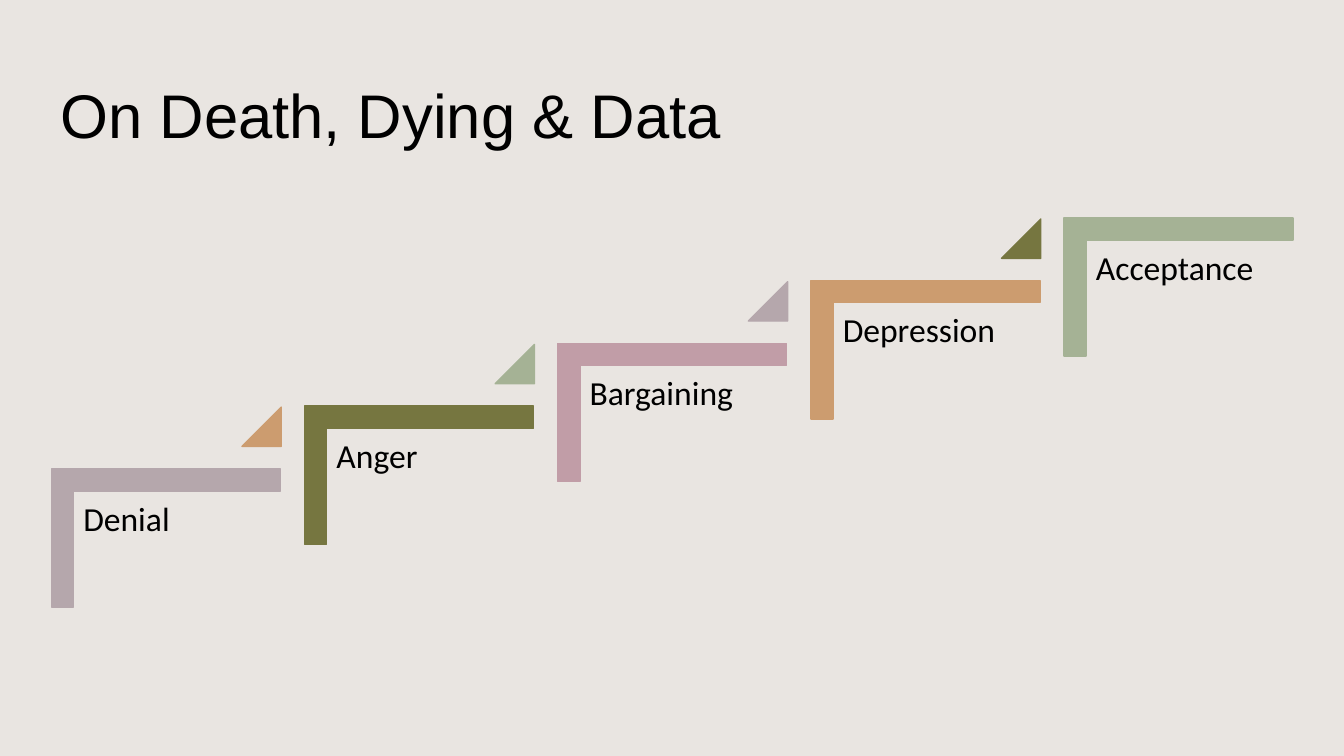
from pptx import Presentation
from pptx.dml.color import RGBColor
from pptx.enum.shapes import MSO_SHAPE as Kind
from pptx.enum.text import MSO_ANCHOR as Anchor, PP_ALIGN as Align
from pptx.util import Cm, Pt

MAUVE, OLIVE, ROSE, TAN, SAGE = "B5A7AC", "767640", "C19DA7", "CC9C6F", "A5B295"
STAGES = [
    ("Denial", MAUVE, TAN),
    ("Anger", OLIVE, SAGE),
    ("Bargaining", ROSE, MAUVE),
    ("Depression", TAN, OLIVE),
    ("Acceptance", SAGE, None),
]
RUN, RISE = 6.38, 1.58


def paint(fill, color):
    fill.solid()
    fill.fore_color.rgb = RGBColor.from_string(color)


class Stairs:
    ink = "000000"
    back = "E9E5E1"

    def __init__(self, deck):
        self.slide = deck.slides.add_slide(deck.slide_layouts[5])
        paint(self.slide.background.fill, self.back)

    def style(self, para, face, size):
        para.alignment = Align.LEFT
        para.font.name = face
        para.font.size = Pt(size)
        para.font.color.rgb = RGBColor.from_string(self.ink)

    def title(self, text, x, y, w, h):
        box = self.slide.shapes.title
        box.left, box.top, box.width, box.height = Cm(x), Cm(y), Cm(w), Cm(h)
        frame = box.text_frame
        frame.text = text
        frame.vertical_anchor = Anchor.MIDDLE
        self.style(frame.paragraphs[0], "Arial", 44)

    def shape(self, kind, color, x, y, w, h, bends, turn=0):
        item = self.slide.shapes.add_shape(kind, Cm(x), Cm(y), Cm(w), Cm(h))
        item.shadow.inherit = False
        item.rotation = turn
        for i, bend in enumerate(bends):
            item.adjustments[i] = bend
        paint(item.fill, color)
        paint(item.line.fill, color)
        item.line.width = Pt(1)

    def label(self, text, x, y, w, h):
        box = self.slide.shapes.add_textbox(Cm(x), Cm(y), Cm(w), Cm(h))
        frame = box.text_frame
        frame.word_wrap = True
        frame.margin_left = frame.margin_right = Cm(0.25)
        frame.margin_top = frame.margin_bottom = Cm(0.25)
        frame.text = text
        para = frame.paragraphs[0]
        para.line_spacing = 0.9
        self.style(para, "Calibri", 24)


def main():
    deck = Presentation()
    deck.slide_width, deck.slide_height = Cm(33.87), Cm(19.05)
    stairs = Stairs(deck)
    stairs.title("On Death, Dying & Data", 1.27, 1.02, 30.28, 3.68)
    for i, (name, color, next_color) in enumerate(STAGES):
        x, y = i * RUN, -i * RISE
        stairs.shape(Kind.CORNER, color, 2.44 + x, 10.67 + y, 3.48, 5.77,
                     [0.16, 0.16], 90)
        stairs.label(name, 1.85 + x, 12.4 + y, 5.21, 4.57)
        if next_color:
            stairs.shape(Kind.ISOSCELES_TRIANGLE, next_color,
                         6.1 + x, 10.26 + y, 0.99, 0.99, [1])
    deck.save("out.pptx")


if __name__ == "__main__":
    main()
